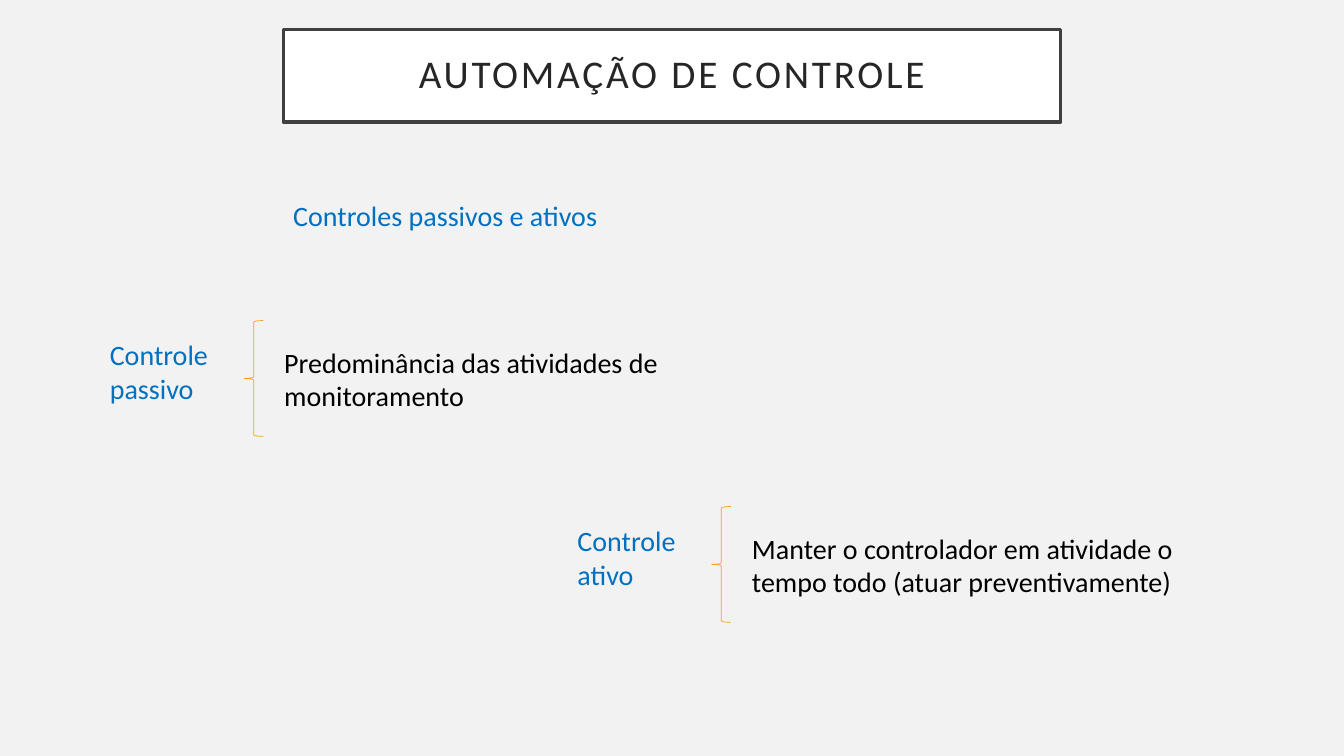
from pptx import Presentation
from pptx.dml.color import RGBColor
from pptx.enum.shapes import MSO_SHAPE
from pptx.enum.text import MSO_ANCHOR, PP_ALIGN
from pptx.util import Inches, Pt

RECTANGLE = MSO_SHAPE.RECTANGLE
LEFT_BRACE = MSO_SHAPE.LEFT_BRACE
MIDDLE = MSO_ANCHOR.MIDDLE
CENTER = PP_ALIGN.CENTER


def color(hex_value):
    return RGBColor.from_string(hex_value)


class SlideBuilder:
    FONT = "Calibri"
    BACKGROUND = "F2F2F2"
    WHITE = "FFFFFF"
    FRAME = "404040"
    HEADING = "262626"
    ACCENT = "0070C0"
    BODY = "000000"
    BRACE = "F6A21D"

    def __init__(self, deck):
        self.deck = deck
        self.slide = deck.slides.add_slide(deck.slide_layouts[6])
        background = self.slide.background.fill
        background.solid()
        background.fore_color.rgb = color(self.BACKGROUND)

    def place(self, left, top, width, height):
        across, down = self.deck.slide_width / 100, self.deck.slide_height / 100
        return (round(left * across), round(top * down),
                round(width * across), round(height * down))

    def set_text(self, frame, wording, size, ink):
        frame.word_wrap = True
        paragraph = frame.paragraphs[0]
        paragraph.text = wording
        paragraph.font.name = self.FONT
        paragraph.font.size = Pt(size)
        paragraph.font.color.rgb = color(ink)
        return paragraph

    def outline(self, preset, area, ink, weight):
        shape = self.slide.shapes.add_shape(preset, *self.place(*area))
        shape.shadow.inherit = False
        shape.fill.background()
        shape.line.color.rgb = color(ink)
        shape.line.width = Pt(weight)
        return shape

    def title(self, wording, area):
        banner = self.outline(RECTANGLE, area, self.FRAME, 2.5)
        banner.fill.solid()
        banner.fill.fore_color.rgb = color(self.WHITE)
        frame = banner.text_frame
        frame.vertical_anchor = MIDDLE
        frame.margin_left = frame.margin_right = Inches(0.2)
        frame.margin_top = frame.margin_bottom = Inches(0.2)
        heading = self.set_text(frame, wording, 28, self.HEADING)
        heading.alignment = CENTER
        heading.line_spacing = 0.9
        heading.runs[0]._r.get_or_add_rPr().set("spc", "200")

    def text(self, wording, area, ink):
        box = self.slide.shapes.add_textbox(*self.place(*area))
        return self.set_text(box.text_frame, wording, 20, ink)

    def label(self, wording, area):
        self.text(wording, area, self.ACCENT).space_before = Pt(10)

    def definition(self, term, meaning, left, top, meaning_width):
        self.outline(LEFT_BRACE, (left + 10.73, top - 1.6, 1.43, 15.33), self.BRACE, 0.5)
        self.text(meaning, (left + 12.98, top + 1, meaning_width, 10.27), self.BODY)
        self.label(term, (left, top, 11.18, 12.27))


def main():
    deck = Presentation()
    deck.slide_width, deck.slide_height = Inches(13.33), Inches(7.5)
    page = SlideBuilder(deck)
    page.title("AUTOMAÇÃO DE CONTROLE", (21.08, 3.87, 57.84, 12.27))
    page.label("Controles passivos e ativos", (21.08, 25.6, 26.78, 7.6))
    page.definition("Controle passivo",
                    "Predominância das atividades de monitoramento",
                    7.43, 44, 30.53)
    page.definition("Controle ativo",
                    "Manter o controlador em atividade o tempo todo (atuar preventivamente)",
                    42.23, 68.6, 36.23)
    deck.save("out.pptx")


if __name__ == "__main__":
    main()
